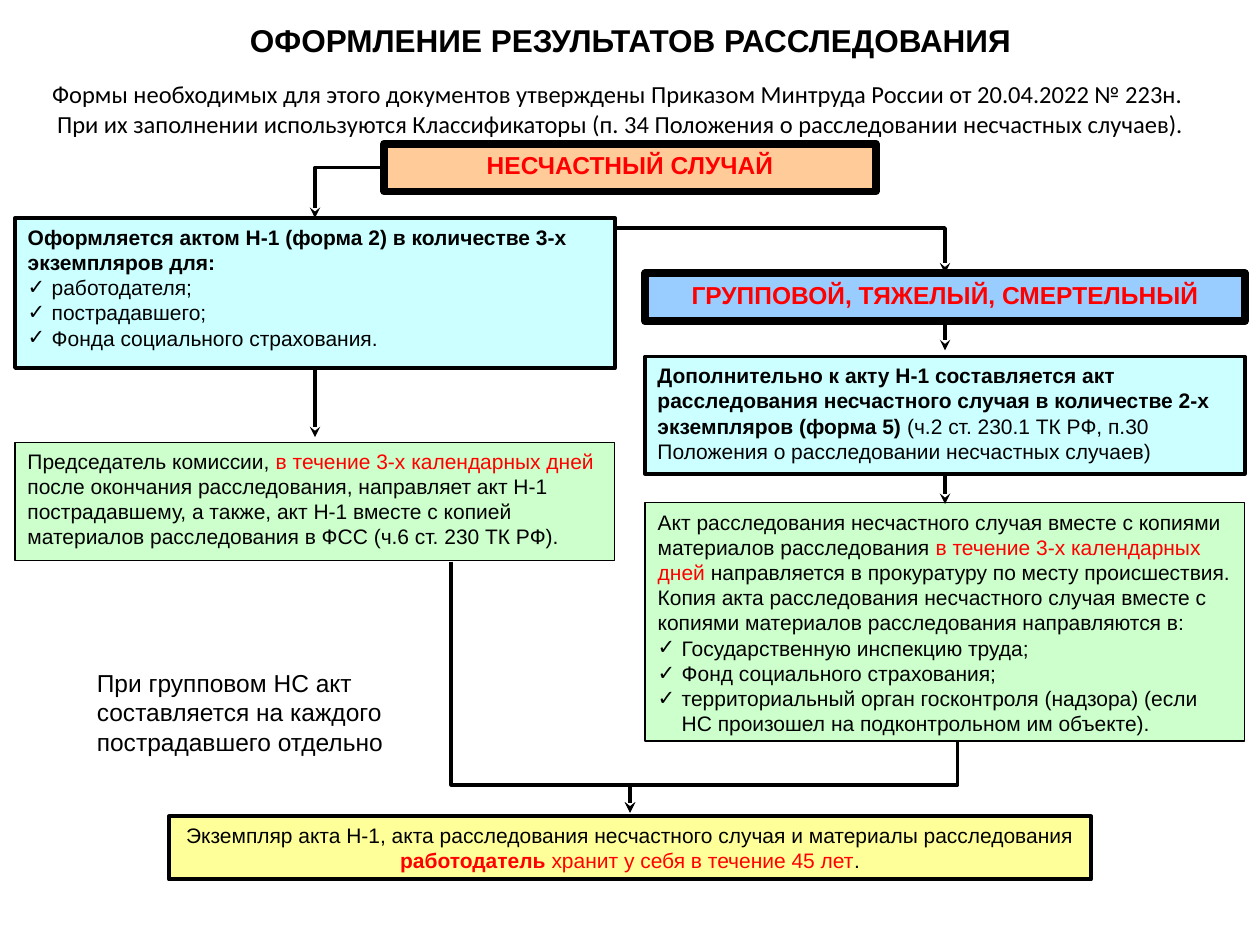
from dataclasses import dataclass

from lxml import etree
from pptx import Presentation
from pptx.dml.color import RGBColor
from pptx.enum import shapes, text
from pptx.oxml import ns
from pptx.util import Inches, Pt


@dataclass(frozen=True)
class Theme:
    font: str = "Arial"
    intro_font: str = "Calibri"
    title: int = 18
    heading: int = 14
    body: int = 12
    black: str = "000000"
    red: str = "FF0000"
    cyan: str = "CCFFFF"
    blue: str = "99CCFF"
    orange: str = "FFCC99"
    green: str = "CCFFCC"
    yellow: str = "FFFF99"
    thick: float = 4.5
    medium: float = 2.25
    thin: float = 0.75
    arrow: float = 2


THEME = Theme()
LEFT_COLUMN, RIGHT_COLUMN, COLUMN_WIDTH = 0.12, 5.12, 4.76
LEFT_AXIS, RIGHT_AXIS = 2.5, 7.5
CENTER = text.PP_ALIGN.CENTER
DEADLINE = "в течение 3-х календарных дней"


@dataclass(frozen=True)
class Phrase:
    """A stretch of text with its own emphasis."""
    words: str
    bold: bool = False
    color: str = THEME.black


@dataclass(frozen=True)
class Line:
    """A paragraph made of phrases, optionally a checklist item."""
    phrases: tuple
    check: bool = False


def plain(words):
    return Line((Phrase(words),))


def bold(words, color=THEME.black):
    return Line((Phrase(words, True, color),))


def checklist(*items):
    return [Line((Phrase(item),), True) for item in items]


def add_xml(parent, tag, **attributes):
    return etree.SubElement(parent, ns.qn(tag), attributes)


def set_bullet(paragraph, check):
    properties = paragraph._p.get_or_add_pPr()
    indent = Inches(0.19) if check else 0
    properties.set("marL", str(indent))
    properties.set("indent", str(-indent))
    if check:
        add_xml(properties, "a:buFont", typeface=THEME.font)
        add_xml(properties, "a:buChar", char="✓")
    else:
        add_xml(properties, "a:buNone")


def write(shape, lines, size=THEME.body, font=THEME.font, align=text.PP_ALIGN.LEFT,
          anchor=text.MSO_ANCHOR.TOP, wrap=True):
    frame = shape.text_frame
    frame.auto_size = text.MSO_AUTO_SIZE.NONE
    frame.word_wrap = wrap
    frame.vertical_anchor = anchor
    for index, line in enumerate(lines):
        paragraph = frame.add_paragraph() if index else frame.paragraphs[0]
        paragraph.alignment = align
        paragraph.space_before = Pt(0)
        set_bullet(paragraph, line.check)
        paragraph.font.name = font
        paragraph.font.size = Pt(size)
        for phrase in line.phrases:
            run = paragraph.add_run()
            run.text = phrase.words
            run.font.name = font
            run.font.size = Pt(size)
            run.font.bold = phrase.bold
            run.font.color.rgb = RGBColor.from_string(phrase.color)


def place(shape, left, top, width, height):
    shape.left, shape.top = Inches(left), Inches(top)
    shape.width, shape.height = Inches(width), Inches(height)


def paint(shape, fill, border):
    shape.fill.solid()
    shape.fill.fore_color.rgb = RGBColor.from_string(fill)
    shape.line.color.rgb = RGBColor.from_string(THEME.black)
    shape.line.width = Pt(border)


def add_box(slide, area, fill, border, lines, **style):
    box = slide.shapes.add_shape(shapes.MSO_SHAPE.RECTANGLE, *map(Inches, area))
    box.shadow.inherit = False
    paint(box, fill, border)
    write(box, lines, **style)


def fill_list_box(placeholder, area, fill, border, lines):
    place(placeholder, *area)
    paint(placeholder, fill, border)
    write(placeholder, lines)


def add_note(slide, area, lines, **style):
    write(slide.shapes.add_textbox(*map(Inches, area)), lines, **style)


def add_arrow(slide, start, end, kind=shapes.MSO_CONNECTOR.STRAIGHT):
    arrow = slide.shapes.add_connector(kind, *map(Inches, start + end))
    arrow.line.color.rgb = RGBColor.from_string(THEME.black)
    arrow.line.width = Pt(THEME.arrow)
    add_xml(arrow.line._get_or_add_ln(), "a:tailEnd", type="stealth")
    add_xml(arrow._element.spPr, "a:effectLst")
    return arrow


def add_corner_arrow(slide, start, end):
    """Runs sideways, then down."""
    arrow = add_arrow(slide, start, end, shapes.MSO_CONNECTOR.ELBOW)
    arrow._element.spPr.find(ns.qn("a:prstGeom")).set("prst", "bentConnector2")


def add_merging_arrow(slide, start, end, turn_y):
    """Runs down to turn_y, sideways, then down: an elbow turned by 90 degrees."""
    (x1, y1), (x2, y2) = start, end
    middle_x, middle_y = (x1 + x2) / 2, (y1 + y2) / 2
    half_run, half_rise = (y2 - y1) / 2, abs(x2 - x1) / 2
    direction = 1 if x1 > x2 else -1
    arrow = add_arrow(slide,
                      (middle_x - direction * half_run, middle_y - half_rise),
                      (middle_x + direction * half_run, middle_y + half_rise),
                      shapes.MSO_CONNECTOR.ELBOW)
    properties = arrow._element.spPr
    degrees = 90 if direction > 0 else 270
    properties.find(ns.qn("a:xfrm")).set("rot", str(degrees * 60000))
    guides = properties.find(ns.qn("a:prstGeom")).get_or_add_avLst()
    turn = round((turn_y - y1) / (y2 - y1) * 100000)
    add_xml(guides, "a:gd", name="adj1", fmla=f"val {turn}")


def add_boxes(slide):
    add_box(slide, (RIGHT_COLUMN, 2.17, COLUMN_WIDTH, 0.38), THEME.blue, THEME.thick,
            [bold("ГРУППОВОЙ, ТЯЖЕЛЫЙ, СМЕРТЕЛЬНЫЙ", THEME.red)],
            size=THEME.heading, align=CENTER)
    add_box(slide, (3.05, 1.14, 3.9, 0.38), THEME.orange, THEME.thick,
            [bold("НЕСЧАСТНЫЙ СЛУЧАЙ", THEME.red)], size=THEME.heading, align=CENTER)
    add_box(slide, (RIGHT_COLUMN, 2.83, COLUMN_WIDTH, 0.93), THEME.cyan, THEME.medium, [Line((
        Phrase("Дополнительно к акту Н-1 составляется акт расследования несчастного случая "
               "в количестве 2-х экземпляров (форма 5) ", True),
        Phrase("(ч.2 ст. 230.1 ТК РФ, п.30 Положения о расследовании несчастных случаев)")))])
    add_box(slide, (1.34, 6.48, 7.32, 0.5), THEME.yellow, THEME.medium, [Line((
        Phrase("Экземпляр акта Н-1, акта расследования несчастного случая "
               "и материалы расследования "),
        Phrase("работодатель ", True, THEME.red),
        Phrase("хранит у себя в течение 45 лет", color=THEME.red),
        Phrase(".")))], align=CENTER)
    add_box(slide, (LEFT_COLUMN, 3.51, COLUMN_WIDTH, 0.94), THEME.green, THEME.thin, [Line((
        Phrase("Председатель комиссии, "),
        Phrase(DEADLINE, color=THEME.red),
        Phrase(" после окончания расследования, направляет акт Н-1 пострадавшему, а также, "
               "акт Н-1 вместе с копией материалов расследования в ФСС (ч.6 ст. 230 ТК РФ).")))])


def add_lists(act_copies, recipients):
    fill_list_box(act_copies, (LEFT_COLUMN, 1.73, COLUMN_WIDTH, 1.19), THEME.cyan, THEME.medium, [
        bold("Оформляется актом Н-1 (форма 2) в количестве 3-х экземпляров для:"),
        *checklist("работодателя;", "пострадавшего;", "Фонда социального страхования.")])
    fill_list_box(recipients, (RIGHT_COLUMN, 3.99, COLUMN_WIDTH, 1.89), THEME.green, THEME.thin, [
        Line((Phrase("Акт расследования несчастного случая вместе с копиями "
                     "материалов расследования "),
              Phrase(DEADLINE + " ", color=THEME.red),
              Phrase("направляется в прокуратуру по месту происшествия."))),
        plain("Копия акта расследования несчастного случая вместе с копиями "
              "материалов расследования направляются в:"),
        *checklist("Государственную инспекцию труда;", "Фонд социального страхования;",
                   "территориальный орган госконтроля (надзора) "
                   "(если НС произошел на подконтрольном им объекте).")])


def add_arrows(slide):
    add_corner_arrow(slide, (3.02, 1.33), (LEFT_AXIS, 1.73))
    add_corner_arrow(slide, (4.9, 1.81), (RIGHT_AXIS, 2.17))
    for x, top, bottom in ((RIGHT_AXIS, 2.58, 2.78), (RIGHT_AXIS, 3.76, 4),
                           (LEFT_AXIS, 2.92, 3.47)):
        add_arrow(slide, (x, top), (x, bottom))
    for start in ((3.58, 4.46), (7.6, 5.88)):
        add_merging_arrow(slide, start, (5, 6.45), turn_y=6.23)


def main():
    deck = Presentation()
    deck.slide_width, deck.slide_height = Inches(10), Inches(7.5)
    slide = deck.slides.add_slide(deck.slide_layouts.get_by_name("Two Content"))
    title, act_copies, recipients = list(slide.placeholders)[:3]
    place(title, 1.85, 0.12, 6.31, 0.4)
    write(title, [bold("ОФОРМЛЕНИЕ РЕЗУЛЬТАТОВ РАССЛЕДОВАНИЯ")], size=THEME.title,
          align=CENTER, anchor=text.MSO_ANCHOR.MIDDLE, wrap=False)
    add_lists(act_copies, recipients)
    add_boxes(slide)
    add_arrows(slide)
    add_note(slide, (0.12, 0.58, 9.61, 0.57), [
        plain("Формы необходимых для этого документов утверждены "
              "Приказом Минтруда России от 20.04.2022 № 223н. "),
        plain("При их заполнении используются Классификаторы "
              "(п. 34 Положения о расследовании несчастных случаев).")],
        size=THEME.heading, font=THEME.intro_font, align=CENTER)
    add_note(slide, (0.67, 5.25, 2.61, 0.81), [
        plain("При групповом НС акт составляется на каждого пострадавшего отдельно")],
        size=THEME.heading)
    deck.save("out.pptx")


if __name__ == "__main__":
    main()
